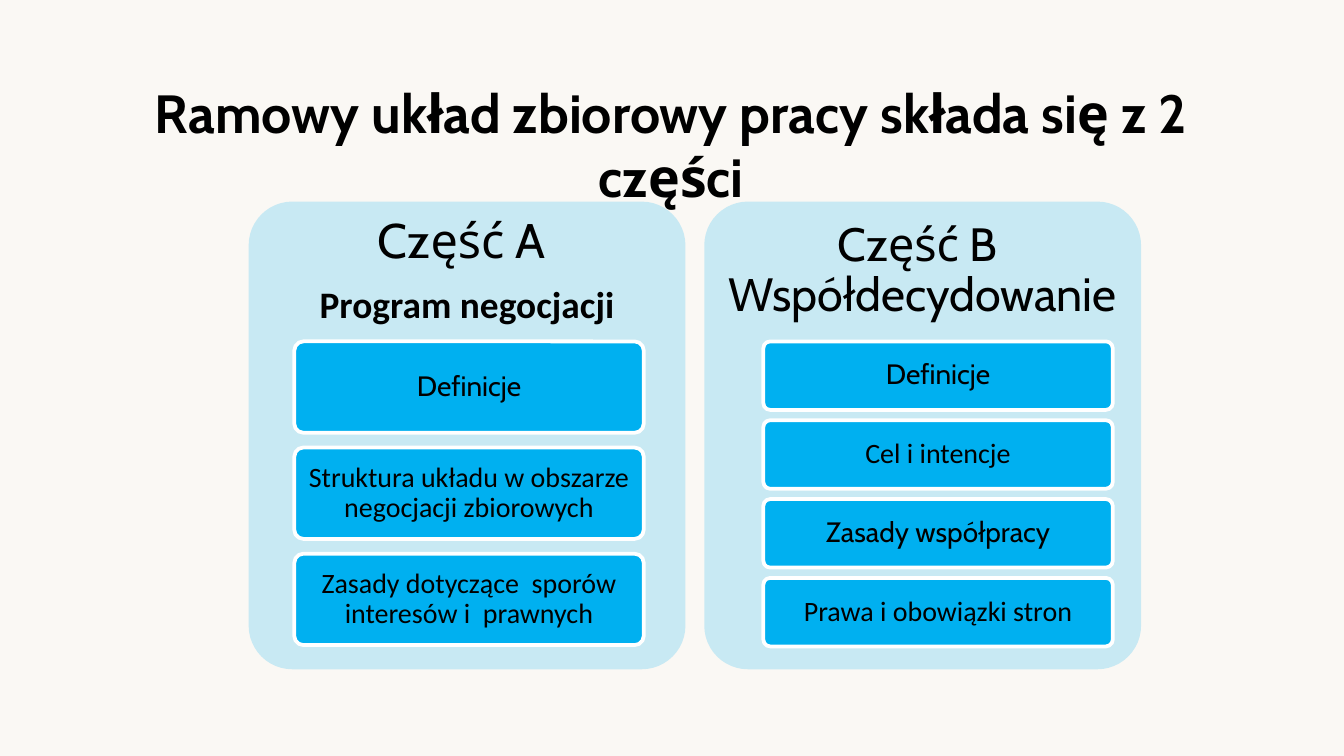
import pptx
import pptx.dml.color
import pptx.enum.shapes
import pptx.enum.text
import pptx.oxml
import pptx.oxml.ns
import pptx.util
from pptx.util import Inches

BACKGROUND = pptx.dml.color.RGBColor(0xFA, 0xF8, 0xF4)
BLUE = pptx.dml.color.RGBColor(0x00, 0xB0, 0xF0)
WHITE = pptx.dml.color.RGBColor(0xFF, 0xFF, 0xFF)
BLACK = pptx.dml.color.RGBColor(0x00, 0x00, 0x00)

PANEL_TOP, PANEL_WIDTH, PANEL_HEIGHT = 1.5, 3.25, 3.48
HEADING_HEIGHT = 1.04
CARD_TOP, CARD_WIDTH = 2.54, 2.6

PARTS = [
    {
        "left": 1.85, "heading_inset": 0.11,
        "headings": [("Część A ", "Cabin", 26, False),
                     ("Program negocjacji", "Calibri", 20, True)],
        "card_left": 2.19, "card_height": 0.68, "last_card_top": 4.12,
        "cards": [("Definicje", "Cabin"),
                  ("Struktura układu w obszarze negocjacji zbiorowych", "Calibri"),
                  ("Zasady dotyczące  sporów interesów i  prawnych", "Calibri")],
    },
    {
        "left": 5.24, "heading_inset": 0.1,
        "headings": [("Część B \vWspółdecydowanie", "Cabin", 25, False)],
        "card_left": 5.68, "card_height": 0.51, "last_card_top": 4.3,
        "cards": [("Definicje", "Cabin"),
                  ("Cel i intencje", "Calibri"),
                  ("Zasady współpracy", "Cabin"),
                  ("Prawa i obowiązki stron", "Calibri")],
    },
]


def write_lines(frame, lines, inset_x, inset_y, line_spacing=0.9):
    """Fill a text frame with centred (text, font, size, bold) paragraphs."""
    frame_format = {
        "word_wrap": True,
        "vertical_anchor": pptx.enum.text.MSO_ANCHOR.MIDDLE,
        "margin_left": Inches(inset_x), "margin_right": Inches(inset_x),
        "margin_top": Inches(inset_y), "margin_bottom": Inches(inset_y),
    }
    for name, value in frame_format.items():
        setattr(frame, name, value)
    for index, (text, font, size, bold) in enumerate(lines):
        paragraph = frame.add_paragraph() if index else frame.paragraphs[0]
        paragraph.text = text
        paragraph.alignment = pptx.enum.text.PP_ALIGN.CENTER
        paragraph.line_spacing = line_spacing
        if index < len(lines) - 1:
            paragraph.space_after = pptx.util.Pt(round(size * 0.35))
        font_format = {"name": font, "size": pptx.util.Pt(size), "bold": bold}
        for run in paragraph.runs:
            for name, value in font_format.items():
                setattr(run.font, name, value)
            run.font.color.rgb = BLACK


def add_text(slide, left, top, width, height, lines, inset_x, inset_y, line_spacing=0.9):
    box = slide.shapes.add_textbox(*map(Inches, (left, top, width, height)))
    write_lines(box.text_frame, lines, inset_x, inset_y, line_spacing)


def add_rounded(slide, left, top, width, height):
    rounded = slide.shapes.add_shape(
        pptx.enum.shapes.MSO_SHAPE.ROUNDED_RECTANGLE,
        *map(Inches, (left, top, width, height)))
    rounded.adjustments[0] = 0.1
    rounded.shadow.inherit = False
    rounded.fill.solid()
    rounded.fill.fore_color.rgb = BLUE
    return rounded


def add_panel(slide, left):
    """Add the pale background panel of one part."""
    panel = add_rounded(slide, left, PANEL_TOP, PANEL_WIDTH, PANEL_HEIGHT)
    panel.line.fill.background()
    color = panel.fill._xPr.find(".//" + pptx.oxml.ns.qn("a:srgbClr"))
    alpha = pptx.oxml.parse_xml(
        f'<a:alpha {pptx.oxml.ns.nsdecls("a")} val="20000"/>')
    color.append(alpha)


def add_card(slide, left, top, height, text, font):
    card = add_rounded(slide, left, top, CARD_WIDTH, height)
    card.line.color.rgb = WHITE
    card.line.width = pptx.util.Pt(2)
    write_lines(card.text_frame, [(text, font, 15, False)], 0.04, 0.03)


def add_part(slide, part):
    add_panel(slide, part["left"])
    inset = part["heading_inset"]
    add_text(slide, part["left"], PANEL_TOP, PANEL_WIDTH, HEADING_HEIGHT,
             part["headings"], inset, inset)
    pitch = (part["last_card_top"] - CARD_TOP) / (len(part["cards"]) - 1)
    for index, (text, font) in enumerate(part["cards"]):
        add_card(slide, part["card_left"], CARD_TOP + index * pitch,
                 part["card_height"], text, font)


def main():
    deck = pptx.Presentation()
    deck.slide_width = Inches(10)
    deck.slide_height = deck.slide_width * 9 // 16
    slide = deck.slides.add_slide(deck.slide_layouts[6])
    slide.background.fill.solid()
    slide.background.fill.fore_color.rgb = BACKGROUND
    title = ("Ramowy układ zbiorowy pracy składa się z 2 części", "Cabin", 28.8, True)
    add_text(slide, 0.64, 0.6, 8.71, 0.94, [title], 0.1, 0.05, line_spacing=1.0)
    for part in PARTS:
        add_part(slide, part)
    deck.save("out.pptx")


if __name__ == "__main__":
    main()
